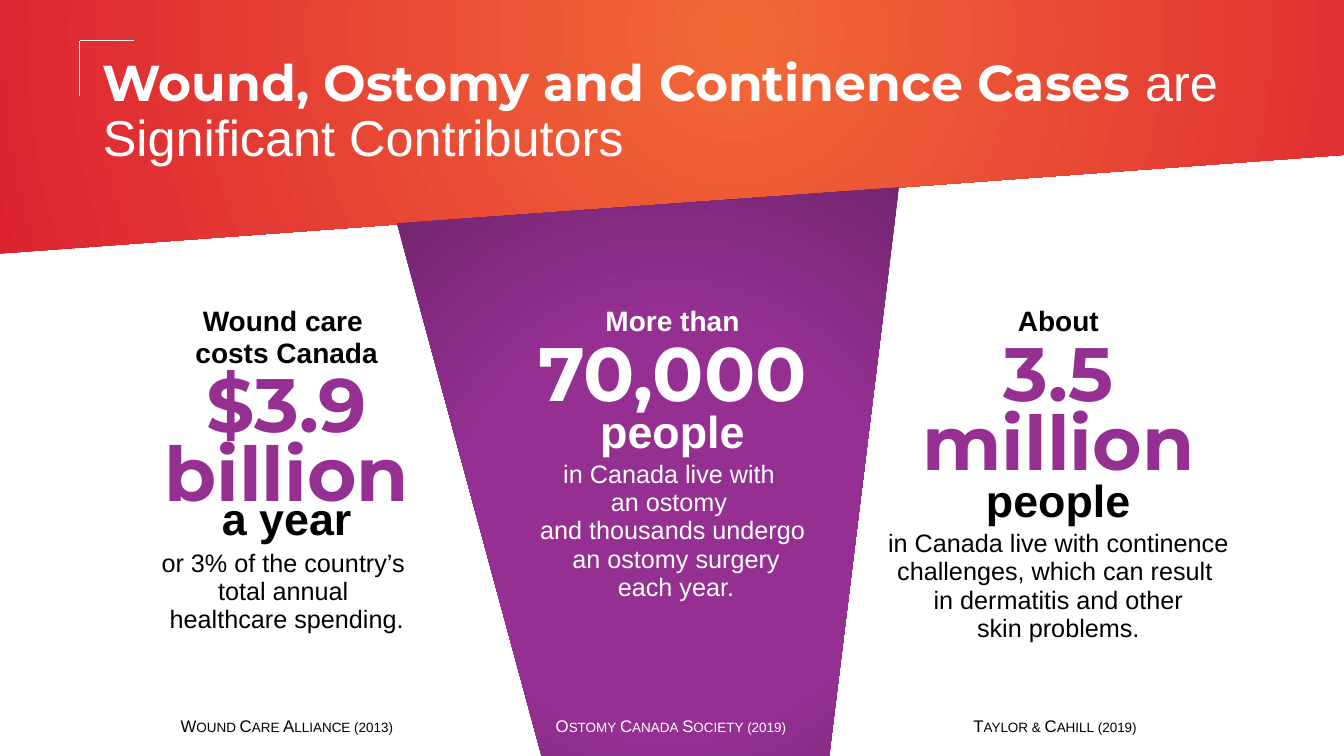
"""Build the slide on wound, ostomy and continence cases in Canada."""
from lxml.etree import SubElement
from pptx import Presentation
from pptx.dml.color import RGBColor
from pptx.enum.shapes import MSO_CONNECTOR, MSO_SHAPE
from pptx.enum.text import MSO_ANCHOR, MSO_AUTO_SIZE as AutoSize, PP_ALIGN
from pptx.oxml.ns import qn
from pptx.util import Inches, Pt

COLORS = {"white": "FFFFFF", "black": "000000", "orange": "F26936",
          "red": "DA1A32", "purple": "953092", "plum": "70246D"}
BODY, DISPLAY = "Arial", "Montserrat"
NO_TABLE_STYLE = "{2D5ABB26-0587-4C30-8999-92F81FD0307C}"
SOURCE_LEFT, SOURCE_STEP = 8.03, 28.58

FACTS = [
    {"ink": "black", "accent": "purple", "source": "Wound Care Alliance (2013)",
     "lead": "Wound care \ncosts Canada", "figure": "$3.9 billion", "figure_after": 0,
     "unit": "a year", "unit_spacing": (0.5, 0, 6),
     "detail": "or 3% of the country’s \ntotal annual \nhealthcare spending."},
    {"ink": "white", "accent": "white", "source": "Ostomy Canada Society (2019)",
     "lead": "More than", "figure": "70,000", "figure_after": 6,
     "unit": "people", "unit_spacing": (0.4, 6, 6),
     "detail": "in Canada live with \nan ostomy \nand thousands undergo"
               "\n an ostomy surgery\n each year."},
    {"ink": "black", "accent": "purple", "source": "Taylor & Cahill (2019)",
     "lead": "About", "figure": "3.5 million", "figure_after": 6,
     "unit": "people", "unit_spacing": (0.4, 6, 6),
     "detail": "in Canada live with continence challenges, which can result "
               "\nin dermatitis and other\nskin problems."},
]


class SlideBuilder:
    def __init__(self, presentation):
        self.width = presentation.slide_width
        self.height = presentation.slide_height
        self.slide = presentation.slides.add_slide(presentation.slide_layouts[5])

    def place(self, *shares):
        sides = (self.width, self.height) * 2
        return [round(side * share / 100) for side, share in zip(sides, shares)]

    def add_text(self, paragraph, text, size, color, font=BODY, bold=False, small_caps=False):
        for index, line in enumerate(text.split("\n")):
            if index:
                paragraph.add_line_break()
            run = paragraph.add_run()
            run.text = line
            run.font.size = Pt(size)
            run.font.name = font
            run.font.bold = bold
            run.font.color.rgb = RGBColor.from_string(COLORS[color])
            if small_caps:
                run.font._element.set("cap", "small")

    def space(self, paragraph, line=1.0, before=0, after=0, align=PP_ALIGN.CENTER):
        paragraph.alignment = align
        paragraph.line_spacing = line
        paragraph.space_before = Pt(before)
        paragraph.space_after = Pt(after)

    def panel(self, preset, shares, rotation, stops):
        shape = self.slide.shapes.add_shape(preset, *self.place(*shares))
        shape.rotation = rotation
        shape.shadow.inherit = False
        shape.line.fill.background()
        shape.fill.gradient()
        for stop, (position, color) in zip(shape.fill.gradient_stops, stops):
            stop.position = position
            stop.color.rgb = RGBColor.from_string(COLORS[color])
        gradient = shape._element.spPr.find(qn("a:gradFill"))
        gradient.remove(gradient.find(qn("a:lin")))
        circle = SubElement(gradient, qn("a:path"), {"path": "circle"})
        SubElement(circle, qn("a:fillToRect"), dict.fromkeys("ltrb", "50000"))
        return shape

    def title(self, shares, runs):
        title = self.slide.shapes.title
        title.left, title.top, title.width, title.height = self.place(*shares)
        frame = title.text_frame
        frame.word_wrap = True
        frame.auto_size = AutoSize.NONE
        frame.vertical_anchor = MSO_ANCHOR.MIDDLE
        paragraph = frame.paragraphs[0]
        self.space(paragraph, line=0.9, align=PP_ALIGN.LEFT)
        for text, font, bold in runs:
            self.add_text(paragraph, text, 36, "white", font, bold)
        self.slide.shapes._spTree.append(title._element)

    def fact(self, cell, fact):
        cell.fill.background()
        frame = cell.text_frame
        ink = fact["ink"]
        parts = [
            (fact["lead"], 20, ink, BODY, True, (1.0, 0, 0)),
            (fact["figure"], 54, fact["accent"], DISPLAY, True, (0.75, 6, fact["figure_after"])),
            (fact["unit"], 32, ink, BODY, True, fact["unit_spacing"]),
            (fact["detail"], 18, ink, BODY, False, (1.0, 0, 0)),
        ]
        for index, (text, size, color, font, bold, spacing) in enumerate(parts):
            paragraph = frame.add_paragraph() if index else frame.paragraphs[0]
            self.space(paragraph, *spacing)
            self.add_text(paragraph, text, size, color, font, bold)

    def table(self, shares, facts):
        frame = self.slide.shapes.add_table(1, len(facts), *self.place(*shares))
        table = frame.table
        table.first_row = table.horz_banding = False
        table._tbl.tblPr.find(qn("a:tableStyleId")).text = NO_TABLE_STYLE
        for index, fact in enumerate(facts):
            self.fact(table.cell(0, index), fact)

    def source(self, shares, text, color):
        frame = self.slide.shapes.add_textbox(*self.place(*shares)).text_frame
        frame.word_wrap = True
        frame.auto_size = AutoSize.SHAPE_TO_FIT_TEXT
        self.space(frame.paragraphs[0])
        self.add_text(frame.paragraphs[0], text, 12, color, small_caps=True)

    def corner(self, left, top, right, bottom):
        group = self.slide.shapes.add_group_shape()
        for ends in ((right, top, left, top), (left, top, left, bottom)):
            line = group.shapes.add_connector(MSO_CONNECTOR.STRAIGHT, *self.place(*ends))
            line.line.color.rgb = RGBColor.from_string(COLORS["white"])
            line.line.width = Pt(1)
            SubElement(line._element.spPr, qn("a:effectLst"))


def main():
    presentation = Presentation()
    presentation.slide_width, presentation.slide_height = Inches(13.33), Inches(7.5)
    builder = SlideBuilder(presentation)
    builder.panel(MSO_SHAPE.RECTANGLE, (-6.26, -17.53, 121.98, 43.87), 355.8,
                  [(0, "orange"), (1, "red")])
    wedge = builder.panel(MSO_SHAPE.TRAPEZOID, (31.2, 27.07, 37.43, 84.93), 175.9,
                          [(0.48, "purple"), (1, "plum")])
    wedge.adjustments[0] = 0.25
    builder.title((6.9, 1.6, 86.27, 26.67),
                  [("Wound, Ostomy and Continence Cases ", DISPLAY, True),
                   ("are Significant Contributors", BODY, False)])
    builder.table((6.98, 39.87, 86.12, 47.07), FACTS)
    for index, fact in enumerate(FACTS):
        builder.source((SOURCE_LEFT + index * SOURCE_STEP, 94, 26.63, 4),
                       fact["source"], fact["ink"])
    builder.corner(5.93, 5.4, 9.98, 12.67)
    presentation.save("out.pptx")


if __name__ == "__main__":
    main()
